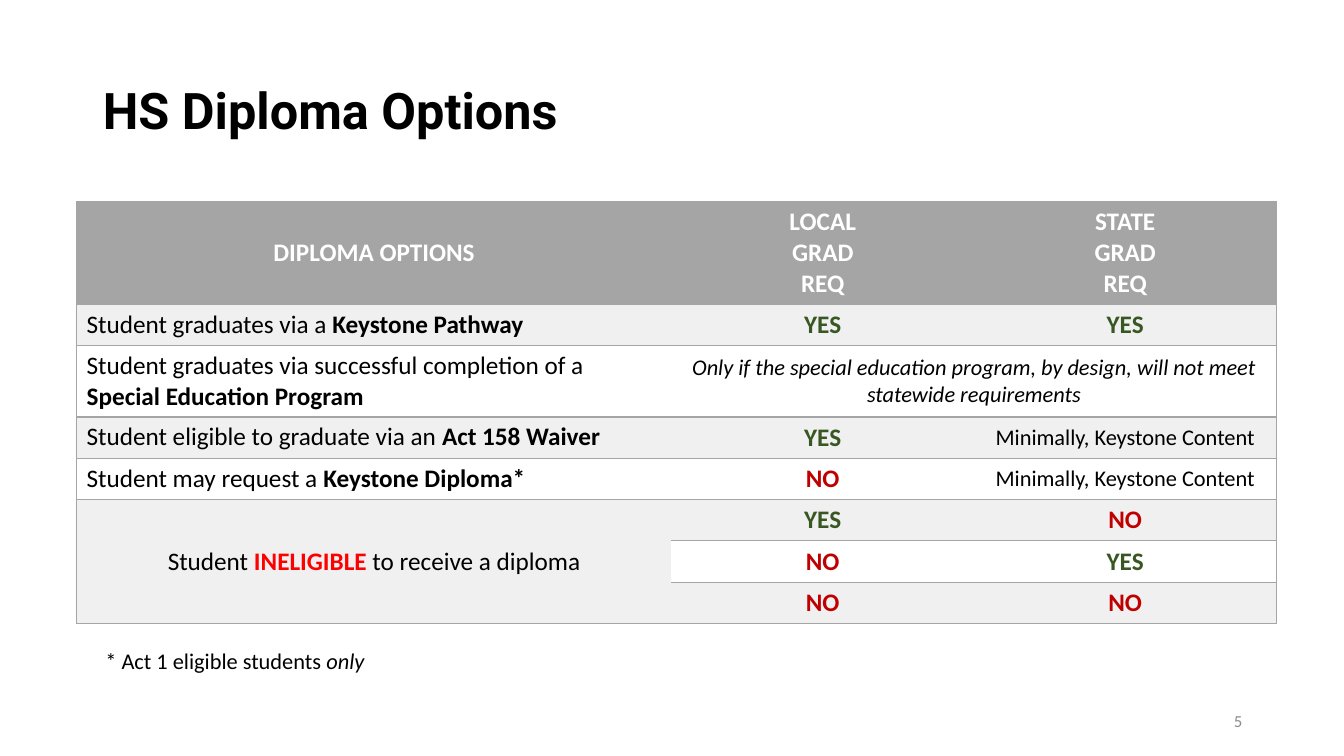
from lxml import etree
from pptx import Presentation
from pptx.dml.color import RGBColor
from pptx.enum.text import MSO_ANCHOR as Anchor, PP_ALIGN as Align
from pptx.oxml.ns import qn
from pptx.util import Inches, Pt

COLORS = {"black": "000000", "white": "FFFFFF", "gray": "A5A5A5", "band": "F0F0F0",
          "green": "385723", "dark red": "C00000", "red": "FF0000", "number": "8C8C8C"}

# style: size, bold, italic, color
STYLES = {"head": (18, True, False, "white"), "plain": (18, False, False, "black"),
          "bold": (18, True, False, "black"), "alert": (18, True, False, "red"),
          "yes": (18, True, False, "green"), "no": (18, True, False, "dark red"),
          "small": (16, False, False, "black"), "remark": (16, False, True, "black"),
          "number": (12, False, False, "number"), "title": (36, True, False, "black")}


def write(frame, runs, align, font="Calibri"):
    """Fill a text frame with (text, style) runs; a line break starts a paragraph."""
    frame.word_wrap = True
    for text, style in runs:
        size, bold, italic, color = STYLES[style]
        for index, line in enumerate(text.split("\n")):
            paragraph = frame.add_paragraph() if index else frame.paragraphs[-1]
            paragraph.alignment = align
            run = paragraph.add_run()
            run.text = line
            run.font.name, run.font.size = font, Pt(size)
            run.font.bold, run.font.italic = bold, italic
            run.font.color.rgb = RGBColor.from_string(COLORS[color])


def add_border(cell, side, visible):
    line = etree.SubElement(cell._tc.get_or_add_tcPr(), qn(f"a:ln{side}"), w=str(Pt(1)))
    if visible:
        fill = etree.SubElement(line, qn("a:solidFill"))
        etree.SubElement(fill, qn("a:srgbClr"), val=COLORS["gray"])
    else:
        etree.SubElement(line, qn("a:noFill"))


prs = Presentation()
prs.slide_width, prs.slide_height = Inches(13.33), Inches(7.5)
slide = prs.slides.add_slide(prs.slide_layouts[5])

title = slide.shapes.title
title.left, title.top = Inches(0.92), Inches(0.4)
title.width, title.height = Inches(11.5), Inches(1.45)
title.text_frame.vertical_anchor = Anchor.MIDDLE
write(title.text_frame, [("HS Diploma Options", "title")], Align.LEFT, "Roboto")
title.text_frame.paragraphs[0].line_spacing = 0.9

YES, NO = [("YES", "yes")], [("NO", "no")]
CONTENT = [("Minimally, Keystone Content", "small")]
ROWS = [
    ([("DIPLOMA OPTIONS", "head")], [("LOCAL\nGRAD\nREQ", "head")],
     [("STATE\nGRAD\nREQ", "head")]),
    ([("Student graduates via a ", "plain"), ("Keystone Pathway", "bold")], YES, YES),
    ([("Student graduates via successful completion of a ", "plain"),
      ("Special Education Program", "bold")],
     [("Only if the special education program, by design, will not meet "
       "statewide requirements", "remark")], []),
    ([("Student eligible to graduate via an ", "plain"), ("Act 158 Waiver", "bold")],
     YES, CONTENT),
    ([("Student may request a ", "plain"), ("Keystone Diploma*", "bold")], NO, CONTENT),
    ([("Student ", "plain"), ("INELIGIBLE", "alert"), (" to receive a diploma", "plain")],
     YES, NO),
    ([], NO, YES),
    ([], NO, NO),
]
HEIGHTS = [1.01, 0.41, 0.7] + [0.41] * 5
WIDTHS = [5.9, 3, 3]

options = slide.shapes.add_table(len(ROWS), len(WIDTHS), Inches(0.76), Inches(2),
                                 Inches(sum(WIDTHS)), Inches(sum(HEIGHTS))).table
options.first_row = options.horz_banding = False
for column, width in zip(options.columns, WIDTHS):
    column.width = Inches(width)
for row, height in zip(options.rows, HEIGHTS):
    row.height = Inches(height)
options.cell(2, 1).merge(options.cell(2, 2))
options.cell(5, 0).merge(options.cell(7, 0))

for r, row in enumerate(ROWS):
    for c, runs in enumerate(row):
        cell = options.cell(r, c)
        add_border(cell, "L", c == 0)
        add_border(cell, "R", c + cell.span_width == len(WIDTHS))
        add_border(cell, "T", True)
        add_border(cell, "B", True)
        fill = "gray" if r == 0 else "band" if r % 2 or c == 0 and r > 4 else "white"
        cell.fill.solid()
        cell.fill.fore_color.rgb = RGBColor.from_string(COLORS[fill])
        is_label = c == 0 and 1 <= r <= 4
        cell.vertical_anchor = Anchor.TOP if is_label else Anchor.MIDDLE
        write(cell.text_frame, runs, Align.LEFT if is_label else Align.CENTER)

page_number = slide.shapes.add_textbox(Inches(9.42), Inches(6.95), Inches(3), Inches(0.4))
page_number.text_frame.vertical_anchor = Anchor.MIDDLE
write(page_number.text_frame, [("5", "number")], Align.RIGHT)

footnote = slide.shapes.add_textbox(Inches(0.76), Inches(6.37), Inches(3.14), Inches(0.37))
write(footnote.text_frame, [("* Act 1 eligible students ", "small"), ("only", "remark")],
      Align.CENTER)

prs.save("out.pptx")
